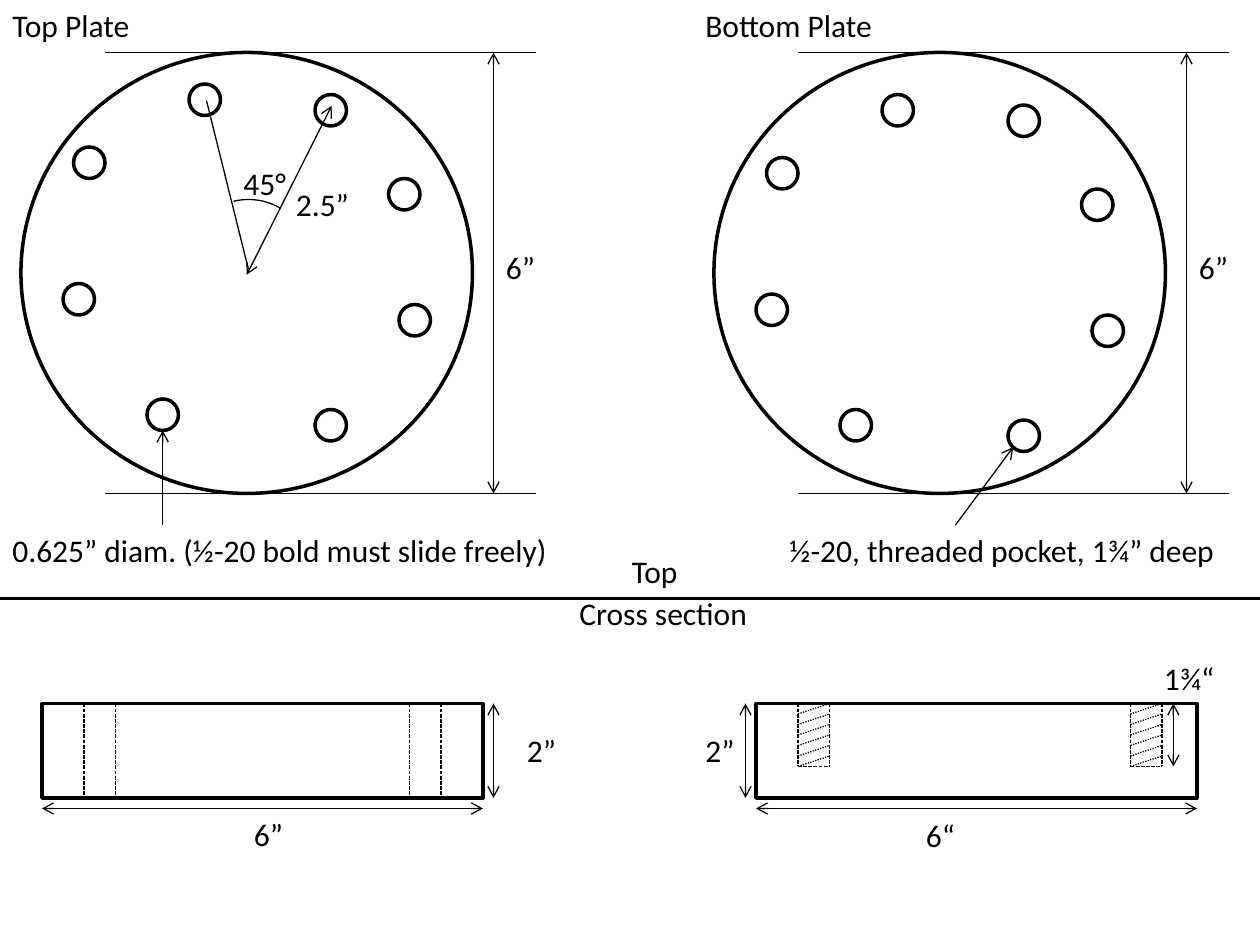
from lxml.etree import SubElement
from pptx import Presentation
from pptx.dml.color import RGBColor
from pptx.enum.dml import MSO_LINE_DASH_STYLE as Dash
from pptx.enum.shapes import MSO_CONNECTOR as Connector, MSO_SHAPE as Shape
from pptx.enum.text import MSO_AUTO_SIZE as AutoSize
from pptx.oxml.ns import qn
from pptx.util import Pt

COLORS = {"ink": "000000", "paper": "FFFFFF"}
FONT = "Calibri"
PLATE_SHIFT = 396
HOLE_SIZE = 18
HOLES = [(108, 48), (180, 54), (222, 102), (42, 84),
         (36, 162), (228, 174), (84, 228), (180, 234)]
SECTION_TOP, SECTION_WIDTH, SECTION_HEIGHT = 402, 252, 54
POCKET_WIDTH, POCKET_DEPTH, THREAD_PITCH = 18, 36, 6


def ink(name):
    """Return the named colour."""
    return RGBColor.from_string(COLORS[name])


def add_outline(page, kind, left, top, width, height, weight=2):
    """Add an unfilled preset shape with a dark outline."""
    shape = page.shapes.add_shape(kind, Pt(left), Pt(top), Pt(width), Pt(height))
    shape.shadow.inherit = False
    shape.fill.background()
    shape.line.color.rgb = ink("ink")
    shape.line.width = Pt(weight)
    return shape


def add_line(page, start, end, weight=0.75, dash=None, arrows=()):
    """Add a straight line, with open arrowheads at the listed ends."""
    line = page.shapes.add_connector(
        Connector.STRAIGHT, *(Pt(value) for value in (*start, *end)))
    line.line.color.rgb = ink("ink")
    line.line.width = Pt(weight)
    if dash is not None:
        line.line.dash_style = dash
    properties = line.line._get_or_add_ln()
    for arrow in arrows:
        SubElement(properties, qn(f"a:{arrow}End"), type="arrow")
    SubElement(line._element.spPr, qn("a:effectLst"))


def add_dimension(page, start, end):
    """Add a dimension line with an arrowhead at both ends."""
    add_line(page, start, end, arrows=("head", "tail"))


def add_label(page, text, left, top, width, height=29):
    """Add an 18 point text label."""
    box = page.shapes.add_textbox(Pt(left), Pt(top), Pt(width), Pt(height))
    frame = box.text_frame
    frame.word_wrap = True
    frame.auto_size = AutoSize.SHAPE_TO_FIT_TEXT
    para = frame.paragraphs[0]
    span = para.add_run()
    span.text = text
    span.font.name = FONT
    span.font.size = Pt(18)
    span.font.color.rgb = ink("ink")


def add_plate(page, title, shift, drop):
    """Draw a plate from above with its holes and diameter."""
    top, bottom = 30, 282
    add_outline(page, Shape.OVAL, shift + 12, top, 258, bottom - top)
    for level in (top, bottom):
        add_line(page, (shift + 60, level), (shift + 306, level))
    add_dimension(page, (shift + 282, top), (shift + 282, bottom))
    add_label(page, "6”", shift + 282, 138, 36)
    add_label(page, title, shift, 0, 174)
    for left, level in HOLES:
        add_outline(page, Shape.OVAL, shift + left, level + drop, HOLE_SIZE, HOLE_SIZE)


def add_hole_angle(page):
    """Mark the angle between two holes and the hole circle radius."""
    add_line(page, (142, 154), (118, 57.5))
    arc = add_outline(page, Shape.ARC, 106, 114, 72, 72, 0.75)
    arc.adjustments[0] = 189.276
    arc.adjustments[1] = 0
    arc.rotation = 300.9
    add_label(page, "45°", 132, 90, 54, 30)
    add_label(page, "2.5”", 162, 102, 54)
    add_dimension(page, (189.5, 60.5), (141, 157))


def add_section(page, left, height_line):
    """Draw a plate from the side with its two dimension lines."""
    bottom = SECTION_TOP + SECTION_HEIGHT
    add_outline(page, Shape.RECTANGLE, left, SECTION_TOP, SECTION_WIDTH, SECTION_HEIGHT)
    add_dimension(page, (left, bottom + 6), (left + SECTION_WIDTH, bottom + 6))
    add_dimension(page, (height_line, SECTION_TOP), (height_line, bottom))


def add_hidden_edge(page, x, depth):
    """Draw a dashed vertical edge down from the top of a section."""
    add_line(page, (x, SECTION_TOP), (x, SECTION_TOP + depth), dash=Dash.SQUARE_DOT)


def add_pocket(page, left):
    """Draw a threaded pocket in section."""
    right, bottom = left + POCKET_WIDTH, SECTION_TOP + POCKET_DEPTH
    for x in (left, right):
        add_hidden_edge(page, x, POCKET_DEPTH)
    add_line(page, (left, bottom), (right, bottom), dash=Dash.SQUARE_DOT)
    for level in range(SECTION_TOP, bottom, THREAD_PITCH):
        add_line(page, (left, level + THREAD_PITCH), (right, level), dash=Dash.ROUND_DOT)


def main():
    """Build the plate drawing and save it."""
    deck = Presentation()
    deck.slide_width, deck.slide_height = Pt(720), Pt(540)
    page = deck.slides.add_slide(deck.slide_layouts[6])
    page.background.fill.solid()
    page.background.fill.fore_color.rgb = ink("paper")

    add_plate(page, "Top Plate", 0, 0)
    add_hole_angle(page)
    add_label(page, "0.625” diam. (½-20 bold must slide freely)", 0, 300, 336)
    add_line(page, (93, 300), (93, 246), arrows=("tail",))

    add_plate(page, "Bottom Plate", PLATE_SHIFT, 6)
    add_label(page, "½-20, threaded pocket, 1¾” deep", 444, 300, 276)
    add_line(page, (546, 300), (579, 255.5), arrows=("tail",))

    add_label(page, "Top", 354, 312, 102)
    add_line(page, (0, 342), (720, 342), 1.5)
    add_label(page, "Cross section", 324, 336, 120)

    add_section(page, 24, 282)
    for x in (48, 66, 234, 252):
        add_hidden_edge(page, x, SECTION_HEIGHT)
    add_label(page, "2”", 294, 414, 66, 30)
    add_label(page, "6”", 138, 462, 66, 30)

    add_section(page, 432, 426)
    for left in (456, 646):
        add_pocket(page, left)
    add_dimension(page, (670.5, SECTION_TOP), (670.5, SECTION_TOP + POCKET_DEPTH))
    add_label(page, "2”", 396, 414, 36, 30)
    add_label(page, "6“", 522, 463, 78)
    add_label(page, "1¾“", 658, 373, 60)
    deck.save("out.pptx")


if __name__ == "__main__":
    main()
